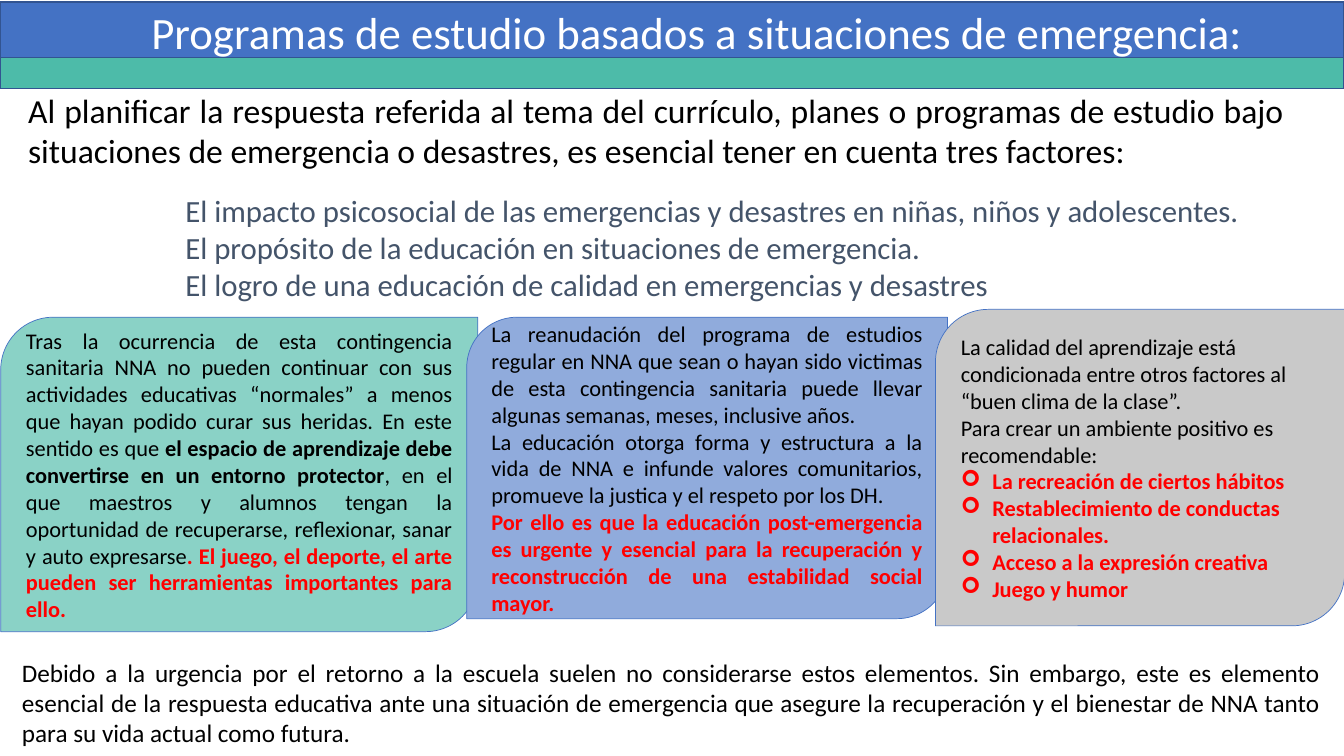
from lxml import etree
from pptx import Presentation
from pptx.dml.color import RGBColor
from pptx.enum import shapes, text
from pptx.oxml import ns
from pptx.util import Pt

COLORS = {
    "blue": "4472C4", "navy": "325491", "teal": "4DBBA9", "mint": "8AD2C6",
    "periwinkle": "90ABDC", "gray": "C9C9C9", "slate": "44546A",
    "red": "FF0000", "black": "000000", "white": "FFFFFF",
}
JUSTIFY = text.PP_ALIGN.JUSTIFY
LEFT = text.PP_ALIGN.LEFT


def rgb(name):
    return RGBColor.from_string(COLORS[name])


def run(content, **fmt):
    """Pair a piece of text with the format that sets it apart."""
    return content, fmt


def key(content):
    return run(content, bold=True, color="red")


def write(p, content, size=16, color="black", bold=False, font="Calibri"):
    r = p.add_run()
    r.text = content
    r.font.name, r.font.size, r.font.bold = font, Pt(size), bold
    r.font.color.rgb = rgb(color)


class Deck:
    def __init__(self, width, height):
        self.prs = Presentation()
        self.prs.slide_width, self.prs.slide_height = Pt(width), Pt(height)
        self.slide = self.prs.slides.add_slide(self.prs.slide_layouts[6])

    def paragraphs(self, sp, items, align=LEFT, margin=0, bullet=None, **fmt):
        """Add paragraphs, each given as a list of runs, to a shape."""
        tf = sp.text_frame
        tf.word_wrap = True
        for runs in items:
            p = tf.paragraphs[0]
            if p.runs:
                p = tf.add_paragraph()
            p.alignment = align
            pPr = p._p.get_or_add_pPr()
            pPr.set("marL", str(Pt(margin)))
            if bullet:
                pPr.set("indent", str(-Pt(margin)))
                etree.SubElement(pPr, ns.qn("a:buFont"), typeface="Wingdings")
                etree.SubElement(pPr, ns.qn("a:buChar"), char=bullet)
            for content, own in runs:
                write(p, content, **{**fmt, **own})

    def shape(self, kind, box, fill, line, weight):
        sp = self.slide.shapes.add_shape(kind, *map(Pt, box))
        sp.shadow.inherit = False
        sp.fill.solid()
        sp.fill.fore_color.rgb = rgb(fill)
        sp.line.color.rgb = rgb(line)
        sp.line.width = Pt(weight)
        sp.text_frame.vertical_anchor = text.MSO_ANCHOR.MIDDLE
        return sp

    def band(self, top, height, fill):
        box = (0, top, 960, height)
        return self.shape(shapes.MSO_SHAPE.RECTANGLE, box, fill, "navy", 1)

    def card(self, box, fill):
        kind = shapes.MSO_SHAPE.ROUND_2_DIAG_RECTANGLE
        return self.shape(kind, box, fill, "blue", 0.5)

    def textbox(self, box, items, **fmt):
        sp = self.slide.shapes.add_textbox(*map(Pt, box))
        self.paragraphs(sp, items, **fmt)


def main():
    deck = Deck(960, 540)

    protection = deck.card((0.5, 226.6, 340.8, 224.6), "mint")
    deck.paragraphs(protection, [[
        run("Tras la ocurrencia de esta contingencia sanitaria NNA no pueden "
            "continuar con sus actividades educativas “normales” a menos que "
            "hayan podido curar sus heridas. En este sentido es que "),
        run("el espacio de aprendizaje debe convertirse en un entorno "
            "protector", bold=True),
        run(", en el que maestros y alumnos tengan la oportunidad de "
            "recuperarse, reflexionar, sanar y auto expresarse"),
        key(". El juego, el deporte, el arte pueden ser herramientas "
            "importantes para ello."),
    ]], align=JUSTIFY)

    purpose = deck.card((333.4, 226.6, 343.4, 215.3), "periwinkle")
    deck.paragraphs(purpose, [
        [run("La reanudación del programa de estudios regular en NNA que sean "
             "o hayan sido victimas de esta contingencia sanitaria puede "
             "llevar algunas semanas, meses, inclusive años.")],
        [run("La educación otorga forma y estructura a la vida de NNA e "
             "infunde valores comunitarios, promueve la justica y el respeto "
             "por los DH.")],
        [key("Por ello es que la educación post-emergencia es urgente y "
             "esencial para la recuperación y reconstrucción de una "
             "estabilidad social mayor.")],
    ], align=JUSTIFY)

    quality = deck.card((668.2, 221, 292.3, 226.1), "gray")
    deck.paragraphs(quality, [
        [run("La calidad del aprendizaje está condicionada entre otros "
             "factores al “buen clima de la clase”.")],
        [run("Para crear un ambiente positivo es recomendable:")],
    ])
    deck.paragraphs(quality, [
        [key("La recreación de ciertos hábitos")],
        [key("Restablecimiento de conductas relacionales.")],
        [key("Acceso a la expresión creativa")],
        [key("Juego y humor")],
    ], margin=22.5, bullet="➢")

    deck.textbox((89.3, 133.2, 872, 87.1), [
        [run("El impacto psicosocial de las emergencias y desastres en niñas, "
             "niños y adolescentes.")],
        [run("El propósito de la educación en situaciones de emergencia.")],
        [run("El logro de una educación de calidad en emergencias y "
             "desastres")],
    ], margin=36, size=22, color="slate")

    title = deck.band(1.4, 41.8, "blue")
    deck.paragraphs(title, [[
        run("Programas de estudio basados a situaciones de emergencia:"),
    ]], align=JUSTIFY, margin=101, size=32, color="white")
    deck.band(41, 22.3, "teal")

    deck.textbox((13, 60.5, 911.5, 65.5), [[
        run("Al planificar la respuesta referida al tema del currículo, planes "
            "o programas de estudio bajo situaciones de emergencia o "
            "desastres, es esencial tener en cuenta tres factores:"),
    ]], align=JUSTIFY, size=24)

    deck.textbox((8.6, 465.8, 941.8, 72.7), [[
        run("Debido a la urgencia por el retorno a la escuela suelen no "
            "considerarse estos elementos. Sin embargo, este es elemento "
            "esencial de la respuesta educativa ante una situación de "
            "emergencia que asegure la recuperación y el bienestar de NNA "
            "tanto para su vida actual como futura."),
    ]], align=JUSTIFY, size=18)

    deck.prs.save("out.pptx")


if __name__ == "__main__":
    main()
